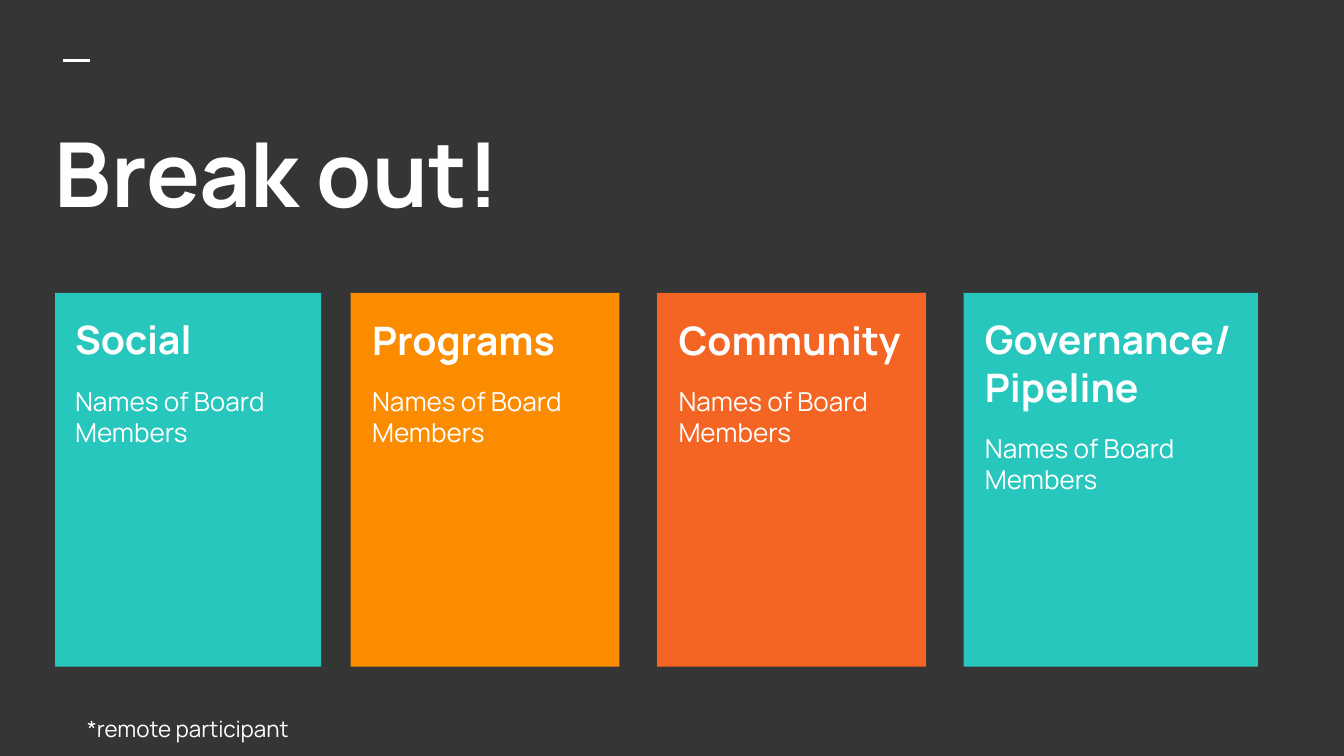
from dataclasses import dataclass

from lxml.etree import SubElement
from pptx import Presentation
from pptx.dml.color import RGBColor
from pptx.enum.shapes import MSO_CONNECTOR as Link, MSO_SHAPE as Shape
from pptx.enum.text import MSO_ANCHOR as Anchor, PP_ALIGN as Align
from pptx.oxml.ns import qn
from pptx.slide import Slide
from pptx.text.text import TextFrame
from pptx.util import Inches, Pt

DARK = RGBColor(0x35, 0x35, 0x35)
WHITE = RGBColor(0xFF, 0xFF, 0xFF)
TEAL = RGBColor(0x27, 0xC7, 0xBD)
AMBER = RGBColor(0xFB, 0x8C, 0x00)
CORAL = RGBColor(0xF4, 0x65, 0x24)
FONT = "Manrope"
WIDTH = 10
TOP, HEIGHT = 2.18, 2.78
TEXT_TOP = 2.25


@dataclass
class Card:
    heads: list[str]
    left: float
    width: float
    fill: RGBColor
    text_left: float
    text_width: float
    text_height: float


@dataclass
class Line:
    text: str
    size: int
    bold: bool = False
    before: int = 0


CARDS = [
    Card(["Social"], 0.41, 1.98, TEAL, 0.46, 1.98, 2.57),
    Card(["Programs"], 2.61, 2, AMBER, 2.67, 1.89, 2.52),
    Card(["Community"], 4.89, 2, CORAL, 4.95, 1.89, 2.19),
    Card(["Governance/", "Pipeline"], 7.17, 2.19, TEAL, 7.23, 2.19, 2.46),
]


def write(frame: TextFrame, lines: list[Line]) -> None:
    for i, line in enumerate(lines):
        para = frame.paragraphs[0] if i == 0 else frame.add_paragraph()
        para.text = line.text
        para.alignment = Align.LEFT
        para.space_before = Pt(line.before)
        font = para.runs[0].font
        font.name, font.size, font.bold = FONT, Pt(line.size), line.bold
        font.color.rgb = WHITE


def add_text(slide: Slide, left: float, top: float, width: float,
             height: float, lines: list[Line]) -> None:
    box = slide.shapes.add_textbox(
        Inches(left), Inches(top), Inches(width), Inches(height))
    frame = box.text_frame
    frame.word_wrap = True
    frame.vertical_anchor = Anchor.TOP
    frame.margin_left = frame.margin_right = Inches(0.1)
    frame.margin_top = frame.margin_bottom = Inches(0.1)
    write(frame, lines)


def add_card(slide: Slide, card: Card) -> None:
    rect = slide.shapes.add_shape(
        Shape.RECTANGLE, Inches(card.left), Inches(TOP),
        Inches(card.width), Inches(HEIGHT))
    rect.shadow.inherit = False
    rect.fill.solid()
    rect.fill.fore_color.rgb = card.fill
    rect.line.fill.background()
    lines = [Line(head, 21, bold=True) for head in card.heads]
    lines.append(Line("Names of Board Members", 14, before=12))
    add_text(slide, card.text_left, TEXT_TOP, card.text_width,
             card.text_height, lines)


def add_dash(slide: Slide) -> None:
    dash = slide.shapes.add_connector(
        Link.STRAIGHT, Inches(0.47), Inches(0.45), Inches(0.67), Inches(0.45))
    dash.line.color.rgb = WHITE
    dash.line.width = Pt(1.5)
    SubElement(dash._element.spPr, qn("a:effectLst"))


def main() -> None:
    deck = Presentation()
    deck.slide_width = Inches(WIDTH)
    deck.slide_height = Inches(WIDTH * 9 / 16)
    slide = deck.slides.add_slide(deck.slide_layouts[6])
    slide.background.fill.solid()
    slide.background.fill.fore_color.rgb = DARK

    add_dash(slide)
    add_text(slide, 0.31, 0.78, 9.43, 1.12, [Line("Break out!", 48, bold=True)])
    for card in CARDS:
        add_card(slide, card)
    add_text(slide, 0.55, 5.22, 3.87, 0.4, [Line("*remote participant", 12)])
    deck.save("out.pptx")


if __name__ == "__main__":
    main()
